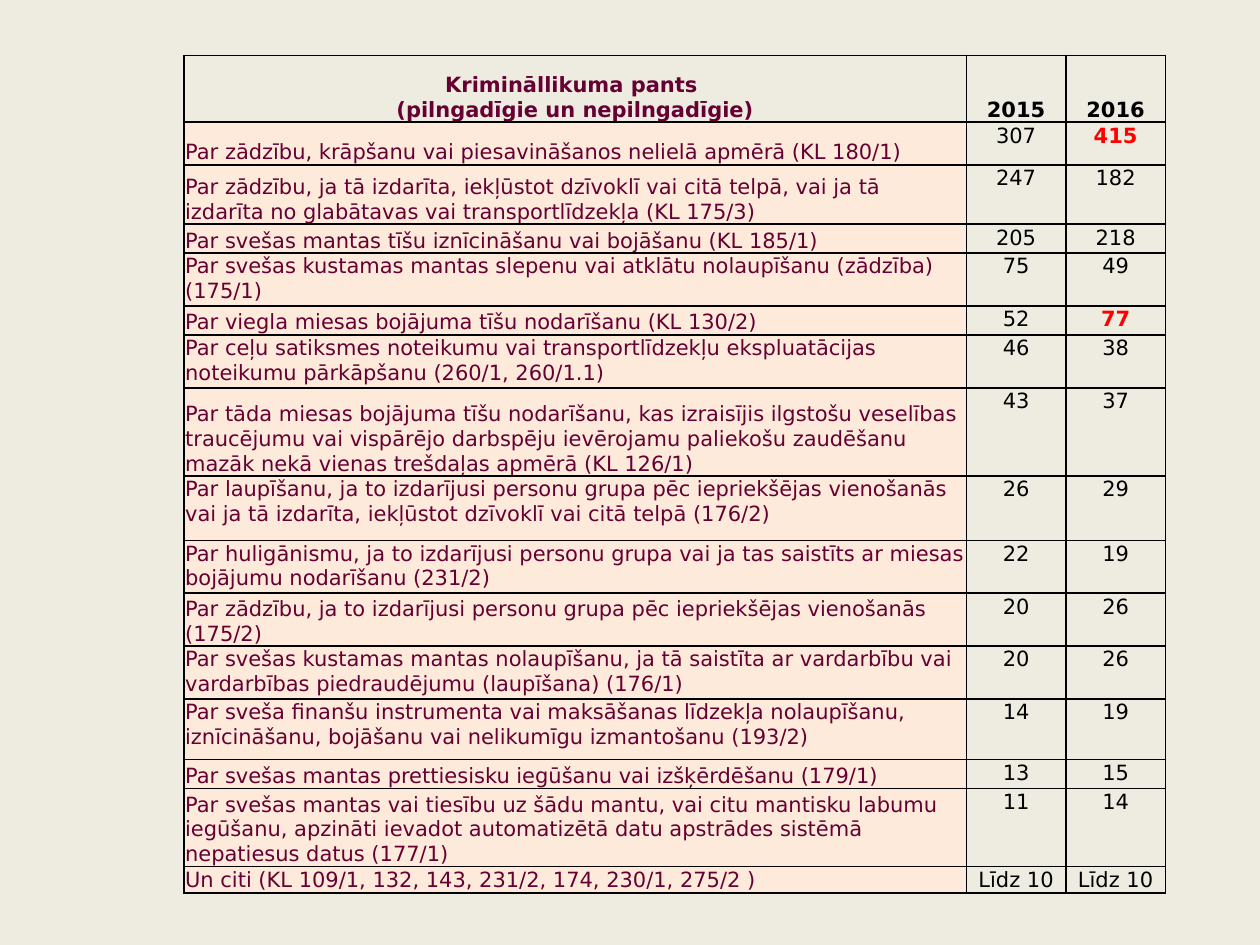
from dataclasses import dataclass

from lxml.etree import SubElement
from pptx import Presentation
from pptx.dml.color import RGBColor
from pptx.enum.text import MSO_ANCHOR, PP_ALIGN
from pptx.oxml.ns import qn
from pptx.util import Inches, Pt


@dataclass(frozen=True)
class Theme:
    font: str = "DejaVu Sans"
    size: int = 12
    border_width: int = 1
    background: str = "EEECE1"
    article_fill: str = "FDEADA"
    article: str = "660033"
    figure: str = "000000"
    highlight: str = "FF0000"


TOP, BOTTOM = MSO_ANCHOR.TOP, MSO_ANCHOR.BOTTOM
HEADER = (["Krimināllikuma pants ", "(pilngadīgie un nepilngadīgie)"], "2015", "2016")
HEADER_HEIGHT = 0.53
COLUMN_WIDTHS = (6.21, 0.79, 0.79)
HIGHLIGHTED = {"415", "77"}

# Row height, anchor of the article text, article, 2015, 2016
ROWS = [
    (0.34, BOTTOM, "Par zādzību, krāpšanu vai piesavināšanos nelielā apmērā (KL 180/1)", "307", "415"),
    (0.47, BOTTOM, "Par zādzību, ja tā izdarīta, iekļūstot dzīvoklī vai citā telpā, vai ja tā "
     "izdarīta no glabātavas vai transportlīdzekļa (KL 175/3)", "247", "182"),
    (0.23, BOTTOM, "Par svešas mantas tīšu iznīcināšanu vai bojāšanu (KL 185/1)", "205", "218"),
    (0.42, TOP, "Par svešas kustamas mantas slepenu vai atklātu nolaupīšanu (zādzība) (175/1)",
     "75", "49"),
    (0.23, BOTTOM, "Par viegla miesas bojājuma tīšu nodarīšanu (KL 130/2)", "52", "77"),
    (0.42, TOP, "Par ceļu satiksmes noteikumu vai transportlīdzekļu ekspluatācijas noteikumu "
     "pārkāpšanu (260/1, 260/1.1)", "46", "38"),
    (0.7, BOTTOM, "Par tāda miesas bojājuma tīšu nodarīšanu, kas izraisījis ilgstošu veselības "
     "traucējumu vai vispārējo darbspēju ievērojamu paliekošu zaudēšanu mazāk nekā vienas "
     "trešdaļas apmērā (KL 126/1)", "43", "37"),
    (0.51, TOP, "Par laupīšanu, ja to izdarījusi personu grupa pēc iepriekšējas vienošanās vai "
     "ja tā izdarīta, iekļūstot dzīvoklī vai citā telpā (176/2)", "26", "29"),
    (0.42, TOP, "Par huligānismu, ja to izdarījusi personu grupa vai ja tas saistīts ar miesas "
     "bojājumu nodarīšanu (231/2)", "22", "19"),
    (0.42, BOTTOM, "Par zādzību, ja to izdarījusi personu grupa pēc iepriekšējas vienošanās (175/2)",
     "20", "26"),
    (0.42, TOP, "Par svešas kustamas mantas nolaupīšanu, ja tā saistīta ar vardarbību vai "
     "vardarbības piedraudējumu (laupīšana) (176/1)", "20", "26"),
    (0.48, TOP, "Par sveša finanšu instrumenta vai maksāšanas līdzekļa nolaupīšanu, iznīcināšanu, "
     "bojāšanu vai nelikumīgu izmantošanu (193/2)", "14", "19"),
    (0.23, BOTTOM, "Par svešas mantas prettiesisku iegūšanu vai izšķērdēšanu (179/1)", "13", "15"),
    (0.62, BOTTOM, "Par svešas mantas vai tiesību uz šādu mantu, vai citu mantisku labumu iegūšanu, "
     "apzināti ievadot automatizētā datu apstrādes sistēmā nepatiesus datus (177/1)", "11", "14"),
    (0.21, TOP, "Un citi (KL 109/1, 132, 143, 231/2, 174, 230/1, 275/2 )", "Līdz 10", "Līdz 10"),
]


class SlideBuilder:
    def __init__(self, slide, theme):
        self.slide = slide
        self.theme = theme

    def set_background(self):
        fill = self.slide.background.fill
        fill.solid()
        fill.fore_color.rgb = RGBColor.from_string(self.theme.background)

    def add_table(self, left, top, column_widths, row_heights):
        frame = self.slide.shapes.add_table(
            len(row_heights), len(column_widths), Inches(left), Inches(top),
            Inches(sum(column_widths)), Inches(sum(row_heights)))
        table = frame.table
        table.first_row = table.horz_banding = False
        for column, width in zip(table.columns, column_widths):
            column.width = Inches(width)
        for row, height in zip(table.rows, row_heights):
            row.height = Inches(height)
        return table

    def write_text(self, text_frame, lines, *, color, bold=False, align=PP_ALIGN.LEFT):
        for index, line in enumerate(lines):
            paragraph = text_frame.add_paragraph() if index else text_frame.paragraphs[0]
            paragraph.alignment = align
            run = paragraph.add_run()
            run.text = line
            run.font.name = self.theme.font
            run.font.size = Pt(self.theme.size)
            run.font.bold = bold
            run.font.color.rgb = RGBColor.from_string(color)

    def draw_borders(self, cell):
        """Borders go in before the fill, as the schema orders them."""
        properties = cell._tc.get_or_add_tcPr()
        for side in ("a:lnL", "a:lnR", "a:lnT", "a:lnB"):
            line = SubElement(properties, qn(side), w=str(Pt(self.theme.border_width)))
            solid = SubElement(line, qn("a:solidFill"))
            SubElement(solid, qn("a:srgbClr"), val=self.theme.figure)

    def fill_cell(self, cell, text, *, anchor=TOP, fill=None, **text_format):
        cell.margin_left = cell.margin_right = cell.margin_top = Inches(0.01)
        cell.margin_bottom = 0
        cell.vertical_anchor = anchor
        self.draw_borders(cell)
        if fill:
            cell.fill.solid()
            cell.fill.fore_color.rgb = RGBColor.from_string(fill)
        else:
            cell.fill.background()
        lines = [text] if isinstance(text, str) else text
        self.write_text(cell.text_frame, lines, **text_format)


def add_offence_table(builder):
    theme = builder.theme
    heights = [HEADER_HEIGHT] + [row[0] for row in ROWS]
    table = builder.add_table(1.46, 0.44, COLUMN_WIDTHS, heights)

    for column, text in enumerate(HEADER):
        builder.fill_cell(table.cell(0, column), text, anchor=BOTTOM, bold=True,
                          color=theme.figure if column else theme.article,
                          align=PP_ALIGN.CENTER)

    for row, (_, anchor, article, *counts) in enumerate(ROWS, start=1):
        builder.fill_cell(table.cell(row, 0), article, anchor=anchor,
                          fill=theme.article_fill, color=theme.article)
        for column, count in enumerate(counts, start=1):
            highlighted = count in HIGHLIGHTED
            builder.fill_cell(table.cell(row, column), count, bold=highlighted,
                              color=theme.highlight if highlighted else theme.figure,
                              align=PP_ALIGN.CENTER)


def main():
    presentation = Presentation()
    presentation.slide_width = Inches(10)
    presentation.slide_height = Inches(7.5)
    blank_layout = presentation.slide_layouts[6]
    builder = SlideBuilder(presentation.slides.add_slide(blank_layout), Theme())
    builder.set_background()
    add_offence_table(builder)
    presentation.save("out.pptx")


if __name__ == "__main__":
    main()
